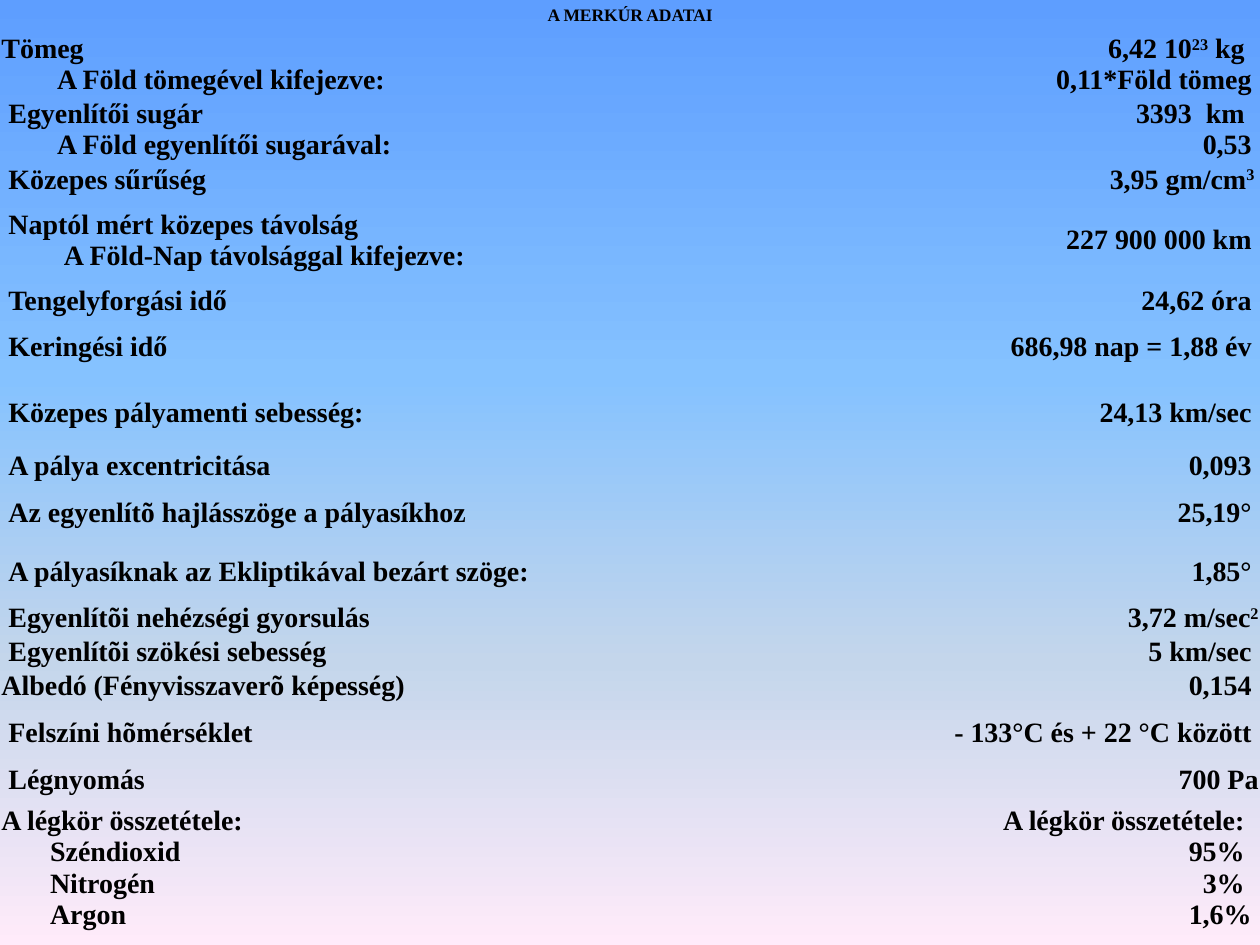
from dataclasses import dataclass

from lxml import etree
from pptx import Presentation
from pptx.dml.color import RGBColor
from pptx.enum.text import MSO_ANCHOR, PP_ALIGN
from pptx.oxml.ns import qn
from pptx.util import Cm, Pt

LEFT, CENTER, RIGHT = PP_ALIGN.LEFT, PP_ALIGN.CENTER, PP_ALIGN.RIGHT
MIDDLE = MSO_ANCHOR.MIDDLE
NO_STYLE = "{2D5ABB26-0587-4C30-8999-92F81FD0307C}"
BLANK_LAYOUT = 6
NBSP = chr(160)


@dataclass(frozen=True)
class Theme:
    font: str = "Times New Roman"
    ink: str = "000000"
    title_size: int = 10
    body_size: int = 16
    sky: tuple = ((0, "5E9EFF"), (40, "85C2FF"), (70, "C4D6EB"), (100, "FFEBFA"))


THEME = Theme()
INSET = 0.03
STEP = 0.14  # width of one space at body size, the unit of all indents
COLUMNS = (11.96, 13.44)
TITLE = "A MERKÚR ADATAI"
TITLE_HEIGHT = 0.64
SINGLE, DOUBLE, TALL = 0.69, 1.32, 1.19

# Row height, label lines as (indent steps, text), value lines, right gap steps.
# Text between carets is superscript.
ROWS = (
    (DOUBLE, [(0, "Tömeg"), (8, "A Föld tömegével kifejezve:")],
     [f"6,42 10^23^ kg{NBSP}", "0,11*Föld tömeg"], 1),
    (DOUBLE, [(1, "Egyenlítői sugár"), (8, "A Föld egyenlítői sugarával:")],
     [f"3393{NBSP} km{NBSP}", "0,53"], 1),
    (SINGLE, [(1, "Közepes sűrűség")], ["3,95 gm/cm^3^"], 0.6),
    (1.75, [(1, "Naptól mért közepes távolság"),
            (9, "A Föld-Nap távolsággal kifejezve:")], ["227 900 000 km"], 1),
    (SINGLE, [(1, "Tengelyforgási idő")], ["24,62 óra"], 1),
    (TALL, [(1, "Keringési idő")], ["686,98 nap = 1,88 év"], 1),
    (1.45, [(1, "Közepes pályamenti sebesség:")], ["24,13 km/sec"], 1),
    (SINGLE, [(1, "A pálya excentricitása")], ["0,093"], 1),
    (TALL, [(1, "Az egyenlítõ hajlásszöge a pályasíkhoz")], ["25,19°"], 1),
    (TALL, [(1, "A pályasíknak az Ekliptikával bezárt szöge:")], ["1,85°"], 1),
    (SINGLE, [(1, "Egyenlítõi nehézségi gyorsulás")], ["3,72 m/sec^2^"], 0),
    (SINGLE, [(1, "Egyenlítõi szökési sebesség")], ["5 km/sec"], 1),
    (SINGLE, [(0, "Albedó (Fényvisszaverõ képesség)")], ["0,154"], 1),
    (TALL, [(1, "Felszíni hõmérséklet")], ["- 133°C és + 22 °C között"], 1),
    (SINGLE, [(1, "Légnyomás")], ["700 Pa"], 0),
    (2.87, [(0, "A légkör összetétele:"), (7, "Széndioxid"), (7, "Nitrogén"), (7, "Argon")],
     [f"A légkör összetétele:{NBSP}", f"95%{NBSP}", f"3%{NBSP}", "1,6%"], 1),
)


def paint_background(page):
    fill = page.background.fill
    fill.gradient()
    fill.gradient_angle = 270
    stops = next(page.background._cSld.iter(qn("a:gsLst")))
    for stop in list(stops):
        stops.remove(stop)
    for position, color in THEME.sky:
        stop = etree.SubElement(stops, qn("a:gs"), pos=str(position * 1000))
        etree.SubElement(stop, qn("a:srgbClr"), val=color)


def write_line(para, text, size=THEME.body_size, align=LEFT, indent=0):
    para.alignment = align
    if indent:
        properties = para._p.get_or_add_pPr()
        properties.set("marL", str(Cm(indent * STEP)))
        properties.set("indent", "0")
    for index, part in enumerate(text.split("^")):
        if not part:
            continue
        span = para.add_run()
        span.text = part
        span.font.name = THEME.font
        span.font.size = Pt(size)
        span.font.bold = True
        span.font.color.rgb = RGBColor.from_string(THEME.ink)
        if index % 2:
            span._r.get_or_add_rPr().set("baseline", "30000")


def fill_cell(cell, lines, gap=0, **line_format):
    cell.fill.background()
    cell.vertical_anchor = MIDDLE
    cell.margin_left = cell.margin_top = cell.margin_bottom = Cm(INSET)
    cell.margin_right = Cm(INSET + gap * STEP)
    frame = cell.text_frame
    for index, (indent, text) in enumerate(lines):
        para = frame.add_paragraph() if index else frame.paragraphs[0]
        write_line(para, text, indent=indent, **line_format)


def add_data_table(page):
    heights = [TITLE_HEIGHT] + [row[0] for row in ROWS]
    frame = page.shapes.add_table(len(heights), len(COLUMNS), Cm(0), Cm(0),
                                  Cm(sum(COLUMNS)), Cm(sum(heights)))
    table = frame.table
    table.first_row = table.horz_banding = False
    next(table._tbl.iter(qn("a:tableStyleId"))).text = NO_STYLE
    for column, width in zip(table.columns, COLUMNS):
        column.width = Cm(width)
    for row, height in zip(table.rows, heights):
        row.height = Cm(height)

    # Title across both columns
    table.cell(0, 0).merge(table.cell(0, 1))
    fill_cell(table.cell(0, 0), [(0, TITLE)], size=THEME.title_size, align=CENTER)

    # Labels on the left, values on the right
    for number, (_, labels, values, gap) in enumerate(ROWS, start=1):
        fill_cell(table.cell(number, 0), labels)
        fill_cell(table.cell(number, 1), [(0, value) for value in values],
                  gap=gap, align=RIGHT)


def main():
    deck = Presentation()
    deck.slide_width, deck.slide_height = Cm(25.4), Cm(19.05)
    page = deck.slides.add_slide(deck.slide_layouts[BLANK_LAYOUT])
    paint_background(page)
    add_data_table(page)
    deck.save("out.pptx")


if __name__ == "__main__":
    main()
